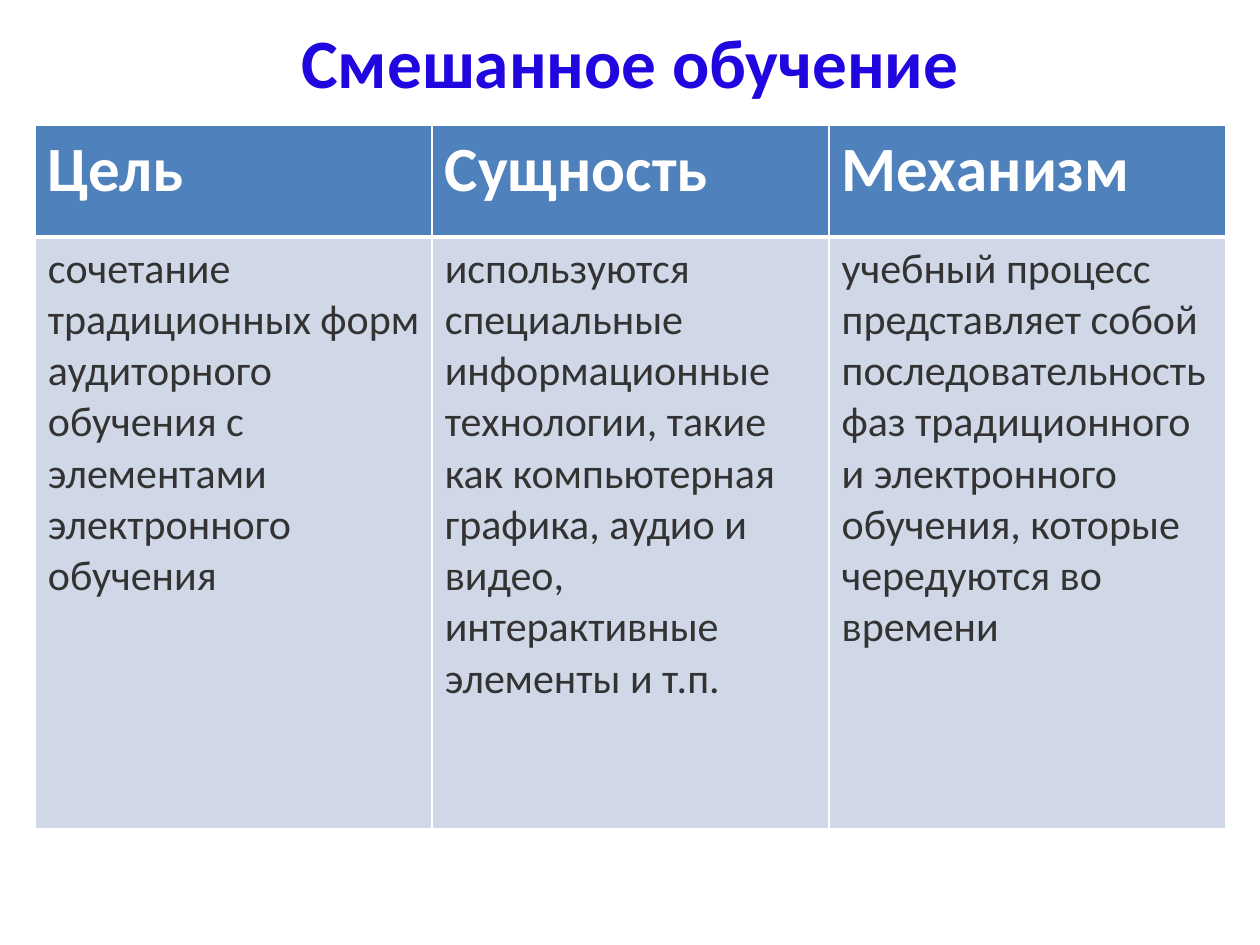
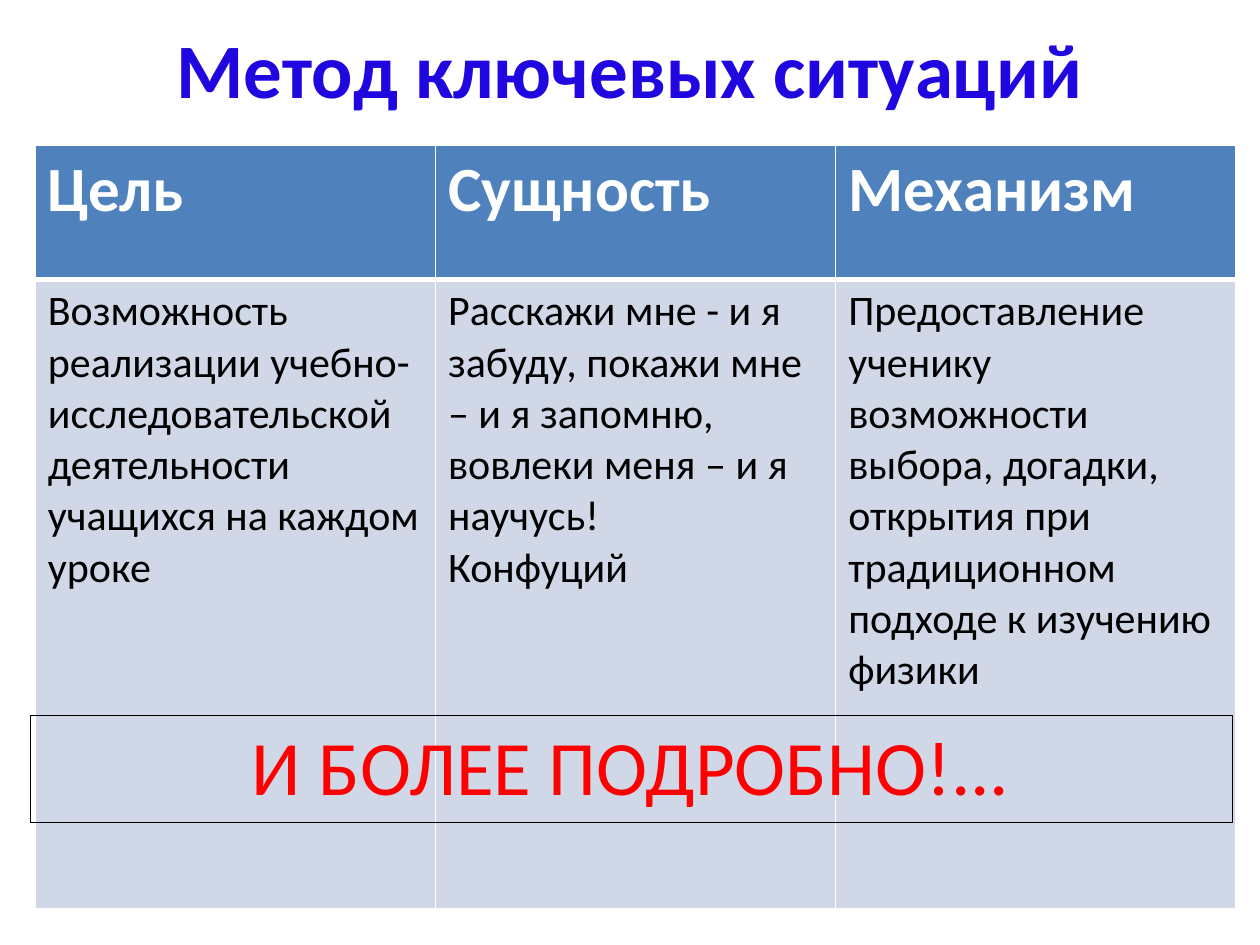
from lxml.etree import SubElement
from pptx import Presentation
from pptx.dml.color import RGBColor
from pptx.enum.text import MSO_ANCHOR as ANCHOR, MSO_AUTO_SIZE as AUTO, PP_ALIGN as ALIGN
from pptx.oxml.ns import qn
from pptx.util import Inches, Pt

COLORS = {
    "title": "2107DF",
    "header": "4F81BD",
    "body": "D0D8E8",
    "white": "FFFFFF",
    "gray": "333333",
    "black": "000000",
    "red": "FF0000",
}
FONT = "Calibri"
HEADERS = ["Цель", "Сущность", "Механизм"]


def write(tf, text, size, color, bold=False, align=ALIGN.LEFT):
    """Fill a text frame, one paragraph per line of text."""
    for i, line in enumerate(text.split("\n")):
        p = tf.paragraphs[0] if i == 0 else tf.add_paragraph()
        p.alignment = align
        r = p.add_run()
        r.text = line
        r.font.name = FONT
        r.font.size = Pt(size)
        r.font.bold = bold
        r.font.color.rgb = RGBColor.from_string(COLORS[color])


class Deck:
    """Holds the shared style and the current slide."""

    def __init__(self):
        self.prs = Presentation()
        self.prs.slide_width = Inches(10)
        self.prs.slide_height = Inches(7.5)
        self.s = None

    def slide(self, title, top, height, size):
        """Add a slide with a centred title."""
        self.s = self.prs.slides.add_slide(self.prs.slide_layouts[5])
        sp = self.s.shapes.title
        sp.left, sp.top = Inches(0.5), Inches(top)
        sp.width, sp.height = Inches(9), Inches(height)
        tf = sp.text_frame
        tf.word_wrap = True
        tf.auto_size = AUTO.NONE
        tf.vertical_anchor = ANCHOR.MIDDLE
        write(tf, title, size, "title", bold=True, align=ALIGN.CENTER)

    def table(self, left, top, width, heights, columns):
        """Add a plain table with equal columns and return it."""
        frame = self.s.shapes.add_table(len(heights), columns, Inches(left), Inches(top),
                                        Inches(width), Inches(sum(heights)))
        tbl = frame.table
        tbl.horz_banding = False
        for row, height in zip(tbl.rows, heights):
            row.height = Inches(height)
        return tbl

    def cell(self, cell, text, size, color, fill=None, line="white", top=1, bottom=1, **fmt):
        """Write a cell and set its borders and fill."""
        write(cell.text_frame, text, size, color, **fmt)
        tc_pr = cell._tc.get_or_add_tcPr()
        for side, width in zip("LRTB", (1, 1, top, bottom)):
            ln = SubElement(tc_pr, qn(f"a:ln{side}"), w=str(Pt(width)))
            SubElement(SubElement(ln, qn("a:solidFill")), qn("a:srgbClr"), val=COLORS[line])
        if fill:
            cell.fill.solid()
            cell.fill.fore_color.rgb = RGBColor.from_string(COLORS[fill])
        else:
            cell.fill.background()

    def method_table(self, top, width, heights, texts, color):
        """Add the goal, essence and mechanism table."""
        tbl = self.table(0.28, top, width, heights, len(HEADERS))
        for i, (header, text) in enumerate(zip(HEADERS, texts)):
            self.cell(tbl.cell(0, i), header, 36, "white", "header", bottom=3, bold=True)
            self.cell(tbl.cell(1, i), text, 24, color, "body", top=3)

    def banner(self, text):
        """Add a framed one-cell callout."""
        tbl = self.table(0.24, 5.68, 9.54, [0.83], 1)
        tbl.first_row = False
        self.cell(tbl.cell(0, 0), text, 44, "red", line="black", align=ALIGN.CENTER)


def main():
    """Build both slides and save the file."""
    deck = Deck()

    deck.slide("Смешанное обучение", 0.13, 0.71, 39.6)
    deck.method_table(0.99, 9.45, [0.89, 4.7], [
        "сочетание традиционных форм аудиторного обучения с элементами электронного обучения",
        "используются специальные информационные технологии, такие как компьютерная графика, "
        "аудио и видео, интерактивные элементы и т.п.",
        "учебный процесс представляет собой последовательность фаз традиционного "
        "и электронного обучения, которые чередуются во времени",
    ], "gray")

    deck.slide("Метод ключевых ситуаций", 0, 1.07, 44)
    deck.method_table(1.15, 9.53, [1.07, 4.99], [
        "Возможность реализации учебно-исследовательской деятельности учащихся на каждом уроке",
        "Расскажи мне - и я забуду, покажи мне – и я запомню, вовлеки меня – и я научусь!\n"
        "Конфуций",
        "Предоставление ученику возможности выбора, догадки, открытия при традиционном "
        "подходе к изучению физики",
    ], "black")
    deck.banner("И БОЛЕЕ ПОДРОБНО!...")

    deck.prs.save("out.pptx")


if __name__ == "__main__":
    main()
